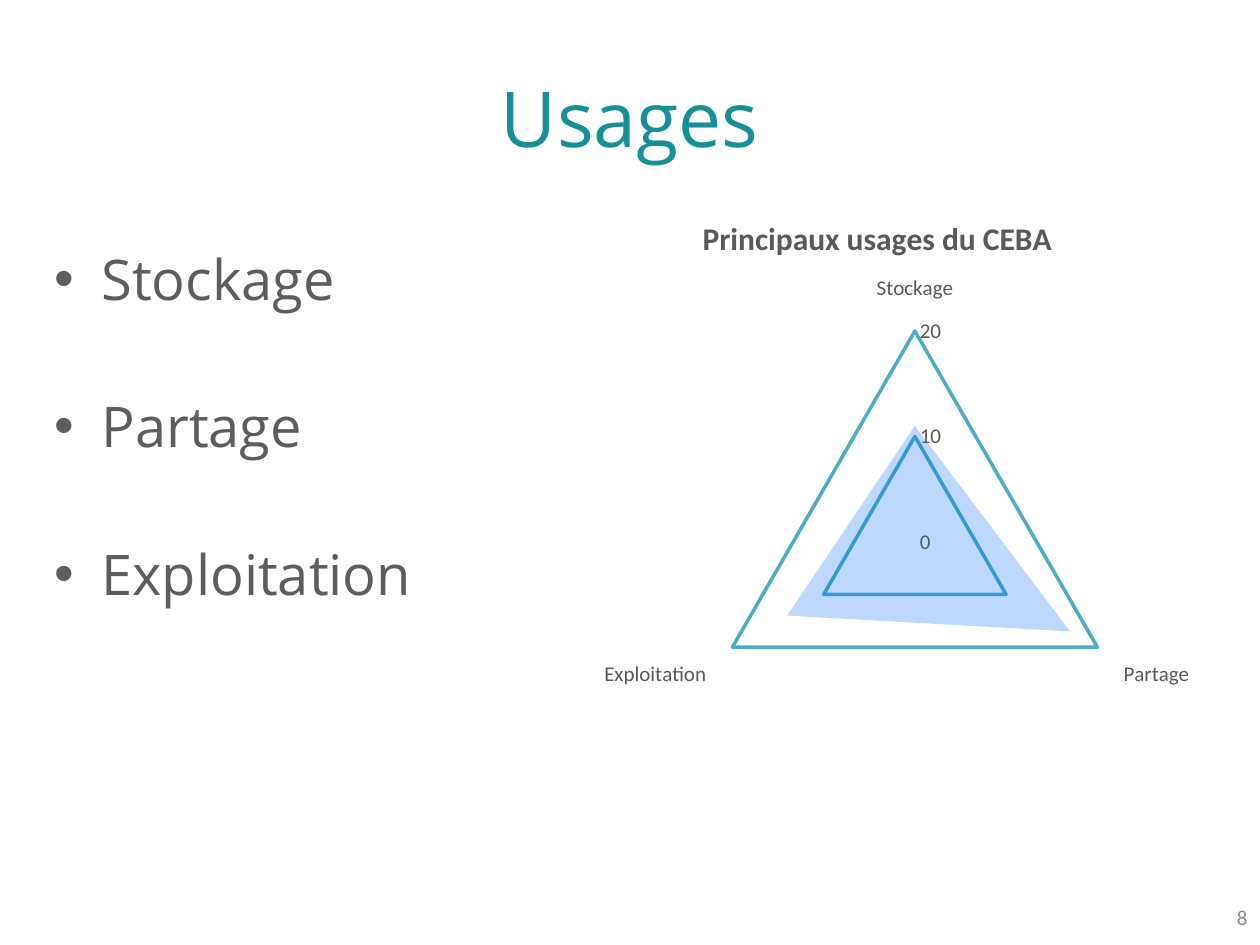
import pptx
import pptx.chart.data
import pptx.dml.color
import pptx.enum.chart
import pptx.enum.text
import pptx.oxml.ns
import pptx.util
from lxml import etree

Pt = pptx.util.Pt
qn = pptx.oxml.ns.qn
Align = pptx.enum.text.PP_ALIGN
Anchor = pptx.enum.text.MSO_ANCHOR
Mark = pptx.enum.chart.XL_TICK_MARK
HUES = {"title": "178F96", "body": "5E5C5C", "label": "595959", "page": "8C8C8C",
        "axis": "D9D9D9", "grid": "4BACC6", "area": "0066FF"}


class Deck:
    """Holds the style and the current slide."""

    def __init__(self, slide):
        self.slide = slide

    def hue(self, name):
        return pptx.dml.color.RGBColor.from_string(HUES[name])

    def style(self, font, face, size, hue, bold=False):
        font.name, font.size, font.bold = face, Pt(size), bold
        font.color.rgb = self.hue(hue)

    def text(self, box, lines, face, size, hue, align, anchor, bullet=False, gap=0):
        shape = self.slide.shapes.add_textbox(*map(Pt, box))
        frame = shape.text_frame
        frame.word_wrap = True
        frame.vertical_anchor = anchor
        if bullet:
            frame.margin_top = Pt(1.3)
        for i, line in enumerate(lines):
            para = frame.paragraphs[0] if i == 0 else frame.add_paragraph()
            para.alignment = align
            if i:
                para.space_before = Pt(gap)
            if bullet:
                props = para._p.get_or_add_pPr()
                props.set("marL", str(Pt(27)))
                props.set("indent", str(Pt(-27)))
                etree.SubElement(props, qn("a:buFont")).set("typeface", "Arial")
                etree.SubElement(props, qn("a:buChar")).set("char", "•")
            run = para.add_run()
            run.text = line
            self.style(run.font, face, size, hue)

    def place(self, node, spot, **vals):
        for old in node.findall(qn("c:layout")):
            node.remove(old)
        lay = etree.Element(qn("c:layout"))
        node.insert(spot, lay)
        man = etree.SubElement(lay, qn("c:manualLayout"))
        for key, val in vals.items():
            etree.SubElement(man, qn("c:" + key)).set("val", str(val))

    def radar(self, box, title, cats, vals):
        data = pptx.chart.data.CategoryChartData()
        data.categories = cats
        data.add_series("Series 1", vals)
        kind = pptx.enum.chart.XL_CHART_TYPE.RADAR_FILLED
        chart = self.slide.shapes.add_chart(kind, *map(Pt, box), data).chart
        self.style(chart.font, "Calibri", 12, "label")
        chart.has_legend = False
        chart.has_title = True
        run = chart.chart_title.text_frame.paragraphs[0].add_run()
        run.text = title
        self.style(run.font, "Calibri", 18, "label", True)
        self.place(chart.chart_title._element, 1, xMode="edge", yMode="edge", x=0.21, y=0.05)
        self.place(chart._chartSpace.chart.plotArea, 0, layoutTarget="inner", xMode="edge",
                   yMode="edge", x=0.22, y=0.21, w=0.58, h=0.69)
        for axis in (chart.category_axis, chart.value_axis):
            axis.major_tick_mark = axis.minor_tick_mark = Mark.NONE
            self.style(axis.tick_labels.font, "Calibri", 12, "label")
        names, scale = chart.category_axis, chart.value_axis
        names.has_major_gridlines = False
        names.format.line.color.rgb = self.hue("axis")
        names.format.line.width = Pt(1)
        scale.minimum_scale, scale.maximum_scale, scale.major_unit = 0, 20, 10
        scale.format.line.fill.background()
        scale.has_major_gridlines = True
        grid = scale.major_gridlines.format.line
        grid.color.rgb, grid.width = self.hue("grid"), Pt(2)
        plot = chart.plots[0]
        plot.vary_by_categories = False
        area = plot.series[0].format
        area.line.fill.background()
        area.fill.solid()
        area.fill.fore_color.rgb = self.hue("area")
        tint = plot.series[0]._element.find(".//" + qn("a:srgbClr"))
        etree.SubElement(tint, qn("a:alpha")).set("val", "26000")


def main():
    show = pptx.Presentation()
    show.slide_width, show.slide_height = Pt(720), Pt(540)
    deck = Deck(show.slides.add_slide(show.slide_layouts[6]))
    uses = ["Stockage", "Partage", "Exploitation"]
    deck.text((36, 21.6, 648, 90), ["Usages"], "Open Sans", 44, "title",
              Align.CENTER, Anchor.MIDDLE)
    deck.text((23.8, 138.2, 231.8, 257), uses, "Open Sans", 32, "body",
              Align.LEFT, Anchor.TOP, bullet=True, gap=46)
    deck.radar((311, 101.5, 415.4, 375.1), "Principaux usages du CEBA", uses, (11, 17, 14))
    deck.text((558, 509.8, 162, 28.8), ["8"], "Calibri", 12, "page",
              Align.RIGHT, Anchor.MIDDLE)
    show.save("out.pptx")


if __name__ == "__main__":
    main()
